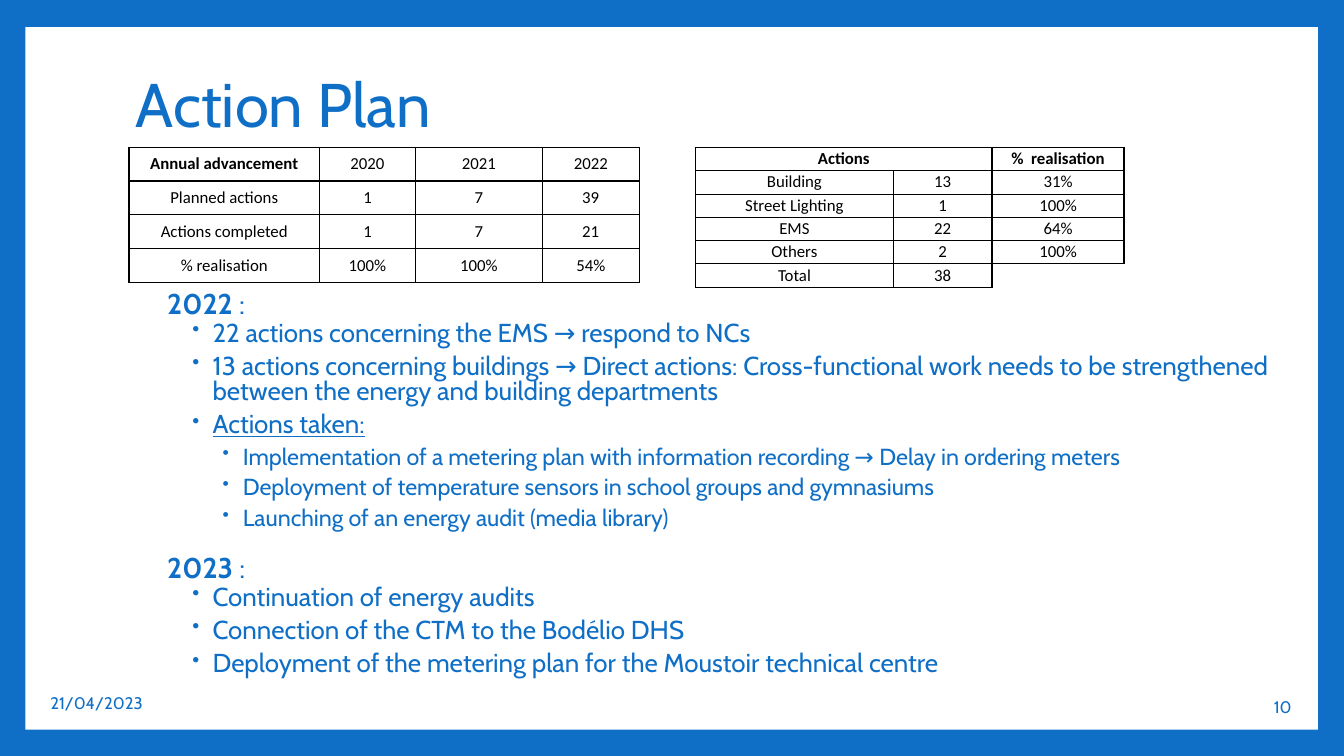
from lxml.etree import SubElement
from pptx import Presentation
from pptx.dml.color import RGBColor
from pptx.enum.shapes import MSO_SHAPE
from pptx.enum.text import MSO_ANCHOR, PP_ALIGN
from pptx.oxml.ns import qn
from pptx.util import Inches, Pt

BLUE, WHITE, BLACK = "0F6FC6", "FFFFFF", "000000"
WIDTH, HEIGHT = Inches(13.33), Inches(7.5)

ADVANCEMENT = [
    ["Annual advancement", "2020", "2021", "2022"],
    ["Planned actions", "1", "7", "39"],
    ["Actions completed", "1", "7", "21"],
    ["% realisation", "100%", "100%", "54%"],
]
ACTIONS = [
    ["Actions", "", "%  realisation"],
    ["Building", "13", "31%"],
    ["Street Lighting", "1", "100%"],
    ["EMS", "22", "64%"],
    ["Others", "2", "100%"],
    ["Total", "38", ""],
]
# Level 0 is a year, levels 1 and 2 are bullets
PLAN = [
    (0, "2022"),
    (1, "22 actions concerning the EMS → respond to NCs"),
    (1, "13 actions concerning buildings → Direct actions: Cross-functional work "
        "needs to be strengthened between the energy and building departments"),
    (1, "Actions taken:"),
    (2, "Implementation of a metering plan with information recording "
        "→ Delay in ordering meters"),
    (2, "Deployment of temperature sensors in school groups and gymnasiums"),
    (2, "Launching of an energy audit (media library)"),
    (0, "2023"),
    (1, "Continuation of energy audits"),
    (1, "Connection of the CTM to the Bodélio DHS"),
    (1, "Deployment of the metering plan for the Moustoir technical centre"),
]
LEVEL_SIZES = [20.4, 18.5, 16.6]
LEVEL_MARGINS = [0.05, 0.5, 0.8]


def color(value):
    return RGBColor.from_string(value)


def across(share):
    """Length as a percentage of the slide width."""
    return int(WIDTH * share / 100)


def down(share):
    """Length as a percentage of the slide height."""
    return int(HEIGHT * share / 100)


def area(left, top, width, height):
    return across(left), down(top), across(width), down(height)


def add_span(para, text, size=12, font="Cabin", fill=BLUE, bold=False, underline=False):
    span = para.add_run()
    span.text = text
    span.font.name, span.font.size = font, Pt(size)
    span.font.bold, span.font.underline = bold, underline
    span.font.color.rgb = color(fill)


def add_box(page, place, anchor=MSO_ANCHOR.MIDDLE):
    frame = page.shapes.add_textbox(*area(*place)).text_frame
    frame.word_wrap = True
    frame.vertical_anchor = anchor
    return frame


def add_label(page, place, text, size=12, align=PP_ALIGN.LEFT, spacing=1.0):
    para = add_box(page, place).paragraphs[0]
    para.alignment, para.line_spacing = align, spacing
    add_span(para, text, size)


def add_bullet(para):
    properties = para._p.get_or_add_pPr()
    tint = SubElement(properties, qn("a:buClr"))
    SubElement(tint, qn("a:srgbClr"), val=BLUE)
    SubElement(properties, qn("a:buSzPct"), val="80000")
    SubElement(properties, qn("a:buChar"), char="•")


def add_plan(page, place):
    frame = add_box(page, place, MSO_ANCHOR.TOP)
    for index, (level, text) in enumerate(PLAN):
        para = frame.add_paragraph() if index else frame.paragraphs[0]
        para.level, para.line_spacing = level, 0.8
        para.space_before = Pt((2 if level else 14) if index else 0)
        para.space_after = Pt(4 if level else 0)
        properties = para._p.get_or_add_pPr()
        properties.set("marL", str(Inches(LEVEL_MARGINS[level])))
        properties.set("indent", str(Inches(-0.2 if level else 0)))
        if level:
            add_bullet(para)
        add_span(para, text, LEVEL_SIZES[level], bold=level == 0,
                 underline=text == "Actions taken:")
        if level == 0:
            add_span(para, " :", LEVEL_SIZES[level])


def add_border(cell, side, weight):
    line = SubElement(cell._tc.get_or_add_tcPr(), qn("a:ln" + side), w=str(Pt(weight)))
    if weight:
        fill = SubElement(line, qn("a:solidFill"))
        SubElement(fill, qn("a:srgbClr"), val=BLACK)
    else:
        SubElement(line, qn("a:noFill"))


def full_border(row, column, side):
    return 1


def actions_border(row, column, side):
    """Thin lines inside the action rows, none around the empty corner."""
    if (row, column) == (5, 2) and side in "RB":
        return 0
    beside = row > 0 and (column, side) in [(0, "R"), (1, "L")]
    between = (side == "B" and 1 <= row <= 3) or (side == "T" and 2 <= row <= 4)
    return 0.5 if beside or between else 1


def add_grid(page, left, top, columns, row_height, rows, bold_cells, border):
    place = area(left, top, sum(columns), row_height * len(rows))
    table = page.shapes.add_table(len(rows), len(columns), *place).table
    table.first_row = table.horz_banding = False
    for column, width in zip(table.columns, columns):
        column.width = across(width)
    for r, values in enumerate(rows):
        table.rows[r].height = down(row_height)
        for c, text in enumerate(values):
            cell = table.cell(r, c)
            cell.margin_left = cell.margin_right = 0
            cell.margin_top = cell.margin_bottom = 0
            cell.vertical_anchor = MSO_ANCHOR.MIDDLE
            para = cell.text_frame.paragraphs[0]
            para.alignment = PP_ALIGN.CENTER
            if text:
                add_span(para, text, font="Calibri", fill=BLACK, bold=(r, c) in bold_cells)
            else:
                para._p.get_or_add_endParaRPr().set("sz", "1200")
            for side in "LRTB":
                add_border(cell, side, border(r, c, side))
            cell.fill.background()
    return table


def add_panel(page, place):
    panel = page.shapes.add_shape(MSO_SHAPE.RECTANGLE, *area(*place))
    panel.shadow.inherit = False
    panel.fill.solid()
    panel.fill.fore_color.rgb = color(WHITE)
    panel.line.fill.background()


def main():
    deck = Presentation()
    deck.slide_width, deck.slide_height = WIDTH, HEIGHT
    page = deck.slides.add_slide(deck.slide_layouts[6])

    # Blue frame around a white panel
    page.background.fill.solid()
    page.background.fill.fore_color.rgb = color(BLUE)
    add_panel(page, (1.88, 3.6, 96.17, 92.93))

    # Title and footer
    add_label(page, (9.38, 4.4, 81.02, 19.73), "Action Plan", size=44, spacing=0.9)
    add_label(page, (3, 90.27, 10.28, 5.33), "21/04/2023")
    add_label(page, (87.47, 90.8, 9.38, 5.33), "10", align=PP_ALIGN.RIGHT)

    # Tables and plan
    add_grid(page, 9.6, 19.47, [14.18, 7.13, 9.45, 7.2], 4.47, ADVANCEMENT,
             [(0, 0)], full_border)
    add_plan(page, (11.33, 38, 84.32, 54.93))
    actions = add_grid(page, 51.76, 19.47, [14.7, 7.35, 9.83], 3.09, ACTIONS,
                       [(0, 0), (0, 2)], actions_border)
    actions.cell(0, 0).merge(actions.cell(0, 1))

    deck.save("out.pptx")


if __name__ == "__main__":
    main()
